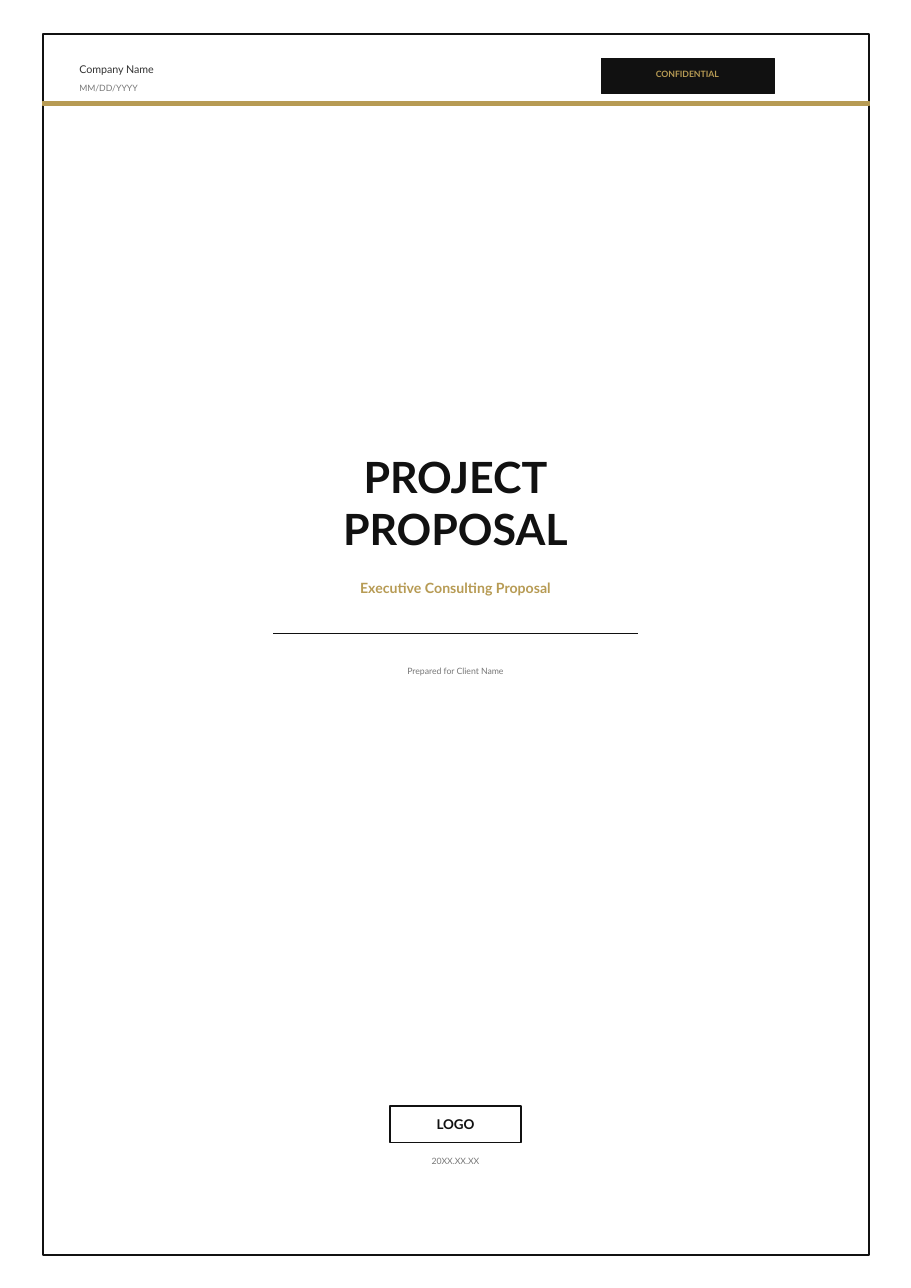
from dataclasses import dataclass
from typing import Optional

from lxml import etree
from pptx import Presentation
from pptx.dml.color import RGBColor
from pptx.enum.shapes import MSO_CONNECTOR, MSO_SHAPE
from pptx.enum.text import MSO_ANCHOR, MSO_AUTO_SIZE, PP_ALIGN
from pptx.oxml.ns import qn
from pptx.util import Inches, Pt

RECT, STRAIGHT = MSO_SHAPE.RECTANGLE, MSO_CONNECTOR.STRAIGHT
LEFT, CENTER = PP_ALIGN.LEFT, PP_ALIGN.CENTER
MIDDLE, FIXED = MSO_ANCHOR.MIDDLE, MSO_AUTO_SIZE.NONE

COLS, ROWS = 827, 1169
INK, GOLD, DARK, GRAY = "111111", "B79B54", "333333", "777777"
FONT = "Lato"
SMALL = 5.7
EDGE = 72  # left column of the header texts


@dataclass
class Area:
    """Place in grid units; without a left column it is centred on the page."""
    top: float
    width: float
    height: float
    left: Optional[float] = None


@dataclass
class Panel:
    area: Area
    line: str
    weight: float
    fill: Optional[str] = None


@dataclass
class Label:
    text: str
    area: Area
    size: float
    color: str = GRAY
    bold: bool = False
    align: PP_ALIGN = CENTER


PANELS = [
    Panel(Area(31, 750, 1108, 39), INK, 1.1),
    Panel(Area(92, 750, 4, 39), GOLD, 0.88, GOLD),
    Panel(Area(53, 157, 32, 546), INK, 0.88, INK),
    Panel(Area(1004, 119, 33), INK, 1.05),
]
TITLE = Label("PROJECT\nPROPOSAL", Area(410, 595, 92), 28.1, INK, True)
SUBTITLE = Label("Executive Consulting Proposal", Area(522, 430, 23), 9.2, GOLD, True)
LABELS = [
    Label("Company Name", Area(55, 154, 16, EDGE), 7, DARK, align=LEFT),
    Label("MM/DD/YYYY", Area(74, 121, 12, EDGE), SMALL, align=LEFT),
    Label("CONFIDENTIAL", Area(62, 134, 11, 557), SMALL, GOLD, True),
    Label("Prepared for Client Name", Area(602, 320, 14), SMALL),
    Label("LOGO", Area(1009, 119, 23), 8.8, INK, True),
    Label("20XX.XX.XX", Area(1047, 176, 14), SMALL),
]
RULE = Area(575, 331, 0)

deck = Presentation()
deck.slide_width, deck.slide_height = Inches(8.27), Inches(11.69)
slide = deck.slides.add_slide(deck.slide_layouts[0])
shapes = slide.shapes


def rgb(code: str) -> RGBColor:
    return RGBColor.from_string(code)


def place(area: Area) -> dict[str, int]:
    left = (COLS - area.width) / 2 if area.left is None else area.left
    wide, tall = deck.slide_width / COLS, deck.slide_height / ROWS
    return {"left": round(left * wide), "top": round(area.top * tall),
            "width": round(area.width * wide), "height": round(area.height * tall)}


def style(item: object, values: dict) -> None:
    for name, value in values.items():
        setattr(item, name, value)


def draw_panel(panel: Panel) -> None:
    box = shapes.add_shape(RECT, **place(panel.area))
    box.shadow.inherit = False
    if panel.fill:
        box.fill.solid()
        box.fill.fore_color.rgb = rgb(panel.fill)
    else:
        box.fill.background()
    box.line.color.rgb = rgb(panel.line)
    box.line.width = Pt(panel.weight)


def draw_rule(area: Area) -> None:
    spot = place(area)
    start, y = spot["left"], spot["top"]
    rule = shapes.add_connector(STRAIGHT, start, y, start + spot["width"], y)
    rule.line.color.rgb = rgb(INK)
    rule.line.width = Pt(0.66)
    etree.SubElement(rule.element.spPr, qn("a:effectLst"))


def write(box: object, label: Label) -> None:
    style(box, place(label.area))
    frame = box.text_frame
    frame.text = label.text
    style(frame, {"word_wrap": True, "auto_size": FIXED, "vertical_anchor": MIDDLE,
                  "margin_left": 0, "margin_right": 0,
                  "margin_top": 0, "margin_bottom": 0})
    for para in frame.paragraphs:
        style(para, {"alignment": label.align, "space_before": Pt(0),
                     "line_spacing": 1.0})
        for run in para.runs:
            style(run.font, {"name": FONT, "size": Pt(label.size),
                             "bold": label.bold})
            run.font.color.rgb = rgb(label.color)


def main() -> None:
    for panel in PANELS:
        draw_panel(panel)
    draw_rule(RULE)
    write(shapes.title, TITLE)
    write(slide.placeholders[1], SUBTITLE)
    for label in LABELS:
        write(shapes.add_textbox(**place(label.area)), label)
    deck.save("out.pptx")


if __name__ == "__main__":
    main()
